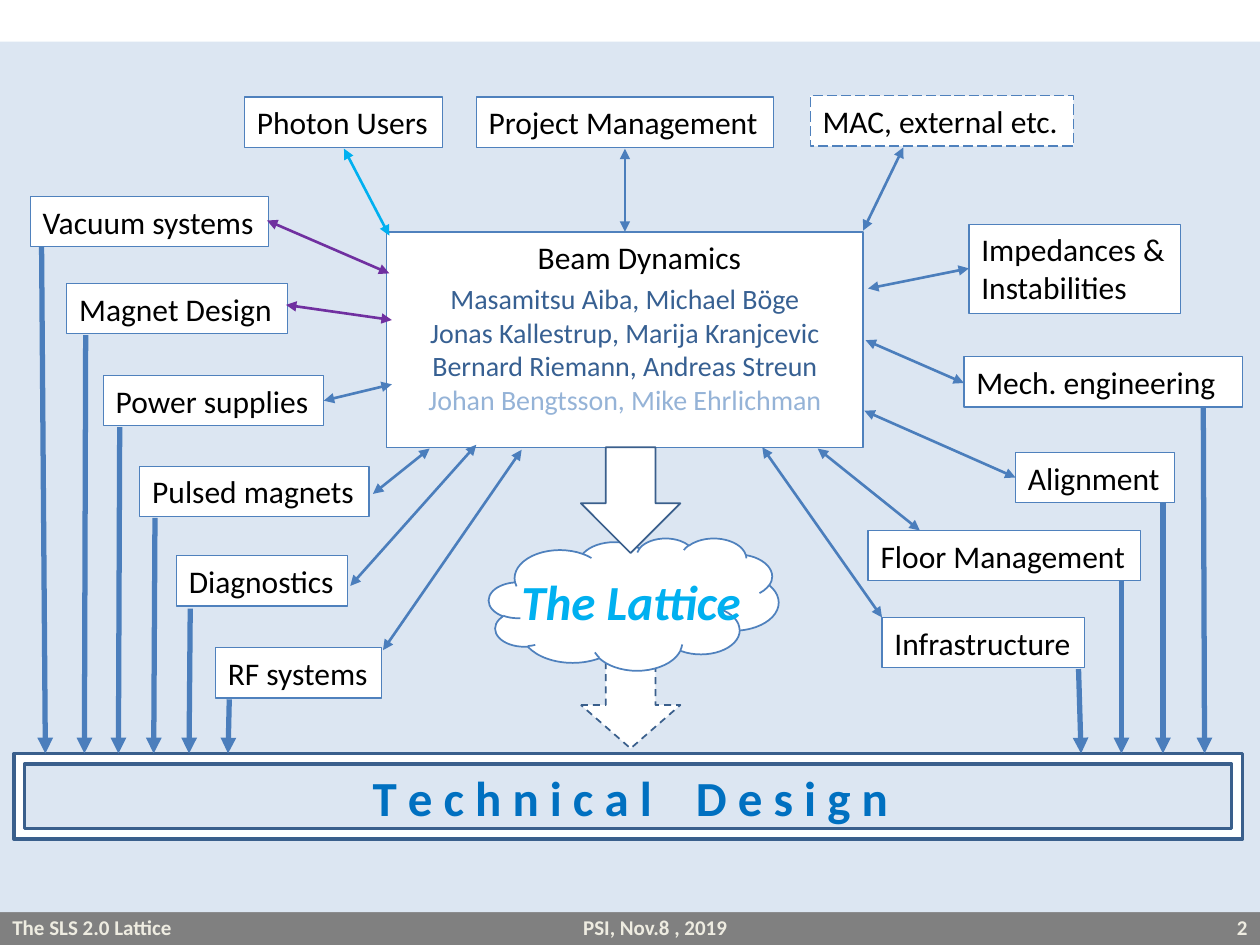
from pptx import Presentation
from pptx.dml.color import RGBColor
from pptx.enum.dml import MSO_LINE
from pptx.enum.shapes import MSO_CONNECTOR, MSO_SHAPE
from pptx.enum.text import MSO_ANCHOR, MSO_AUTO_SIZE, PP_ALIGN
from pptx.oxml.ns import qn
from pptx.util import Inches, Pt
from lxml.etree import SubElement

COLORS = {
    "white": "FFFFFF", "black": "000000", "gray": "808080", "cream": "EEECE1",
    "pale": "DCE6F2", "edge": "4F81BD", "dark": "3A5F8C", "line": "4B7EBC",
    "navy": "376092", "faint": "95B3D7", "cyan": "00B0F0", "blue": "0070C0",
    "violet": "7030A0",
}

LABELS = [
    ("Magnet Design", 0.53, 2.25, 1.75), ("Vacuum systems", 0.24, 1.56, 1.89),
    ("Impedances &\nInstabilities", 7.69, 1.78, 1.68),
    ("Pulsed magnets", 1.11, 3.7, 1.82), ("RF systems", 1.71, 5.14, 1.32),
    ("Photon Users", 1.94, 0.77, 1.57), ("Alignment", 8.06, 3.59, 1.26),
    ("Mech. engineering", 7.65, 2.83, 2.21),
    ("Floor Management", 6.89, 4.21, 2.16),
    ("Power supplies", 0.82, 2.98, 1.75), ("Diagnostics", 1.4, 4.41, 1.36),
    ("MAC, external etc.", 6.43, 0.76, 2.09),
    ("Project Management", 3.78, 0.77, 2.36),
    ("Infrastructure", 7, 4.9, 1.61),
]

DROPS = [
    (0.33, 1.96, 0.36), (0.68, 2.66, 0.67), (0.95, 3.39, 0.94),
    (1.23, 4.11, 1.22), (1.51, 4.83, 1.5), (1.82, 5.55, 1.81),
    (8.56, 5.31, 8.58), (8.9, 4.61, 8.9), (9.23, 3.99, 9.23),
    (9.55, 3.24, 9.56),
]

LINKS = [
    (2.73, 1.18, 3.09, 1.87, "cyan"), (4.96, 1.18, 4.96, 1.84, "line"),
    (7.17, 1.17, 6.85, 1.83, "line"), (7.69, 2.13, 6.89, 2.29, "line"),
    (7.65, 3.04, 6.87, 2.7, "line"), (8.06, 3.79, 6.86, 3.26, "line"),
    (7.3, 4.21, 6.49, 3.56, "line"), (7, 4.9, 6.05, 3.55, "line"),
    (3.09, 2.17, 2.12, 1.75, "violet"), (3.11, 2.54, 2.27, 2.42, "violet"),
    (3.11, 3.05, 2.57, 3.18, "line"), (3.41, 3.56, 2.96, 3.92, "line"),
    (3.78, 3.53, 2.78, 4.65, "line"), (4.14, 3.57, 3.04, 5.16, "line"),
]


def tint(name):
    """Return the named colour."""
    return RGBColor.from_string(COLORS[name])


def paint(shape, fill, edge=None, width=0.75, dash=None):
    """Set the fill and outline of a shape."""
    shape.fill.solid()
    shape.fill.fore_color.rgb = tint(fill)
    if edge:
        shape.line.color.rgb = tint(edge)
        shape.line.width = Pt(width)
        shape.line.dash_style = dash
    else:
        shape.line.fill.background()


def block(slide, kind, x, y, w, h, *style):
    """Add a preset shape."""
    shape = slide.shapes.add_shape(kind, Inches(x), Inches(y), Inches(w), Inches(h))
    shape.shadow.inherit = False
    paint(shape, *style)
    return shape


def write(para, text, size, color, bold=False, italic=False):
    """Add text to a paragraph, one run per line."""
    for i, part in enumerate(text.split("\n")):
        if i:
            para.add_line_break()
        run = para.add_run()
        run.text = part
        font = run.font
        font.name, font.size = "Calibri", Pt(size)
        font.bold, font.italic = bold, italic
        font.color.rgb = tint(color)
    return run


def box(slide, x, y, w, h, align=PP_ALIGN.LEFT, wrap=False):
    """Add a text box and return it with its first paragraph."""
    shape = slide.shapes.add_textbox(Inches(x), Inches(y), Inches(w), Inches(h))
    frame = shape.text_frame
    frame.word_wrap = wrap
    frame.auto_size = MSO_AUTO_SIZE.NONE if wrap else MSO_AUTO_SIZE.SHAPE_TO_FIT_TEXT
    para = frame.paragraphs[0]
    para.alignment = align
    return shape, para


def label(slide, text, x, y, w):
    """Add a framed label."""
    high = 0.71 if "\n" in text else 0.4
    shape, para = box(slide, x, y, w, high, wrap=text.startswith("Mech"))
    dash = MSO_LINE.LONG_DASH if text.startswith("MAC") else None
    paint(shape, "white", "edge", 0.75, dash)
    write(para, text, 18, "black")


def arrow(slide, x1, y1, x2, y2, color, width, ends):
    """Add a straight line with arrowheads at the given ends."""
    link = slide.shapes.add_connector(
        MSO_CONNECTOR.STRAIGHT, Inches(x1), Inches(y1), Inches(x2), Inches(y2))
    link.line.color.rgb = tint(color)
    link.line.width = Pt(width)
    for end in ends:
        SubElement(link.line._get_or_add_ln(), qn(f"a:{end}"), type="triangle")
    SubElement(link._element.spPr, qn("a:effectLst"))


def footer(slide):
    """Add the footer bar and its three texts."""
    block(slide, MSO_SHAPE.RECTANGLE, 0, 7.21, 10, 0.29, "gray")
    parts = [("The SLS 2.0 Lattice", 0, PP_ALIGN.LEFT),
             ("PSI, Nov.8 , 2019", 4.53, PP_ALIGN.LEFT),
             ("2", 8, PP_ALIGN.RIGHT)]
    for text, x, align in parts:
        shape, para = box(slide, x, 7.21, 2, 0.29, align, True)
        shape.text_frame.vertical_anchor = MSO_ANCHOR.MIDDLE
        write(para, text, 12, "cream", True)


def team(slide):
    """Add the central box with the group and its members."""
    shape, para = box(slide, 3.07, 1.84, 3.78, 1.71, PP_ALIGN.CENTER, True)
    paint(shape, "white", "edge")
    para.space_before = Pt(3.6)
    para._p.get_or_add_pPr().set("marL", str(Inches(0.23)))
    write(para, "Beam Dynamics", 18, "black")
    para = shape.text_frame.add_paragraph()
    para.alignment = PP_ALIGN.CENTER
    para.space_before = Pt(3.2)
    write(para, "Masamitsu Aiba, Michael Böge\nJonas Kallestrup, Marija Kranjcevic\n"
          "Bernard Riemann, Andreas Streun", 16, "navy")
    para.add_line_break()
    write(para, "Johan Bengtsson, Mike Ehrlichman", 16, "faint")


def goal(slide):
    """Add the title of the bottom frame and the frame."""
    para = box(slide, 2.86, 6.04, 4.44, 0.57)[1]
    write(para, "T e c h n i c a l", 28, "blue", True)
    gap = write(para, " ", 28, "blue", True)
    gap._r.get_or_add_rPr().set("spc", "1900")
    write(para, "D e s i g n", 28, "blue", True)
    block(slide, MSO_SHAPE.FRAME, 0.11, 5.98, 9.75, 0.68, "white", "dark", 2)


def main():
    """Build the slide and save it."""
    deck = Presentation()
    deck.slide_width, deck.slide_height = Inches(10), Inches(7.5)
    slide = deck.slides.add_slide(deck.slide_layouts[6])
    footer(slide)
    block(slide, MSO_SHAPE.RECTANGLE, 0, 0.33, 10, 6.91, "pale")
    block(slide, MSO_SHAPE.DOWN_ARROW, 4.61, 5.25, 0.79, 0.69,
          "white", "dark", 1, MSO_LINE.DASH)
    block(slide, MSO_SHAPE.CLOUD, 3.88, 4.27, 2.3, 1.05, "white", "edge", 1)
    team(slide)
    block(slide, MSO_SHAPE.DOWN_ARROW, 4.61, 3.55, 0.79, 0.84, "white", "dark", 1)
    write(box(slide, 4.04, 4.49, 1.98, 0.57)[1], "The Lattice", 28, "cyan", True, True)
    for item in LABELS:
        label(slide, *item)
    goal(slide)
    for x1, y1, x2 in DROPS:
        arrow(slide, x1, y1, x2, 5.98, "line", 3, ["tailEnd"])
    for x1, y1, x2, y2, color in LINKS:
        arrow(slide, x1, y1, x2, y2, color, 1.5, ["headEnd", "tailEnd"])
    deck.save("out.pptx")


if __name__ == "__main__":
    main()
